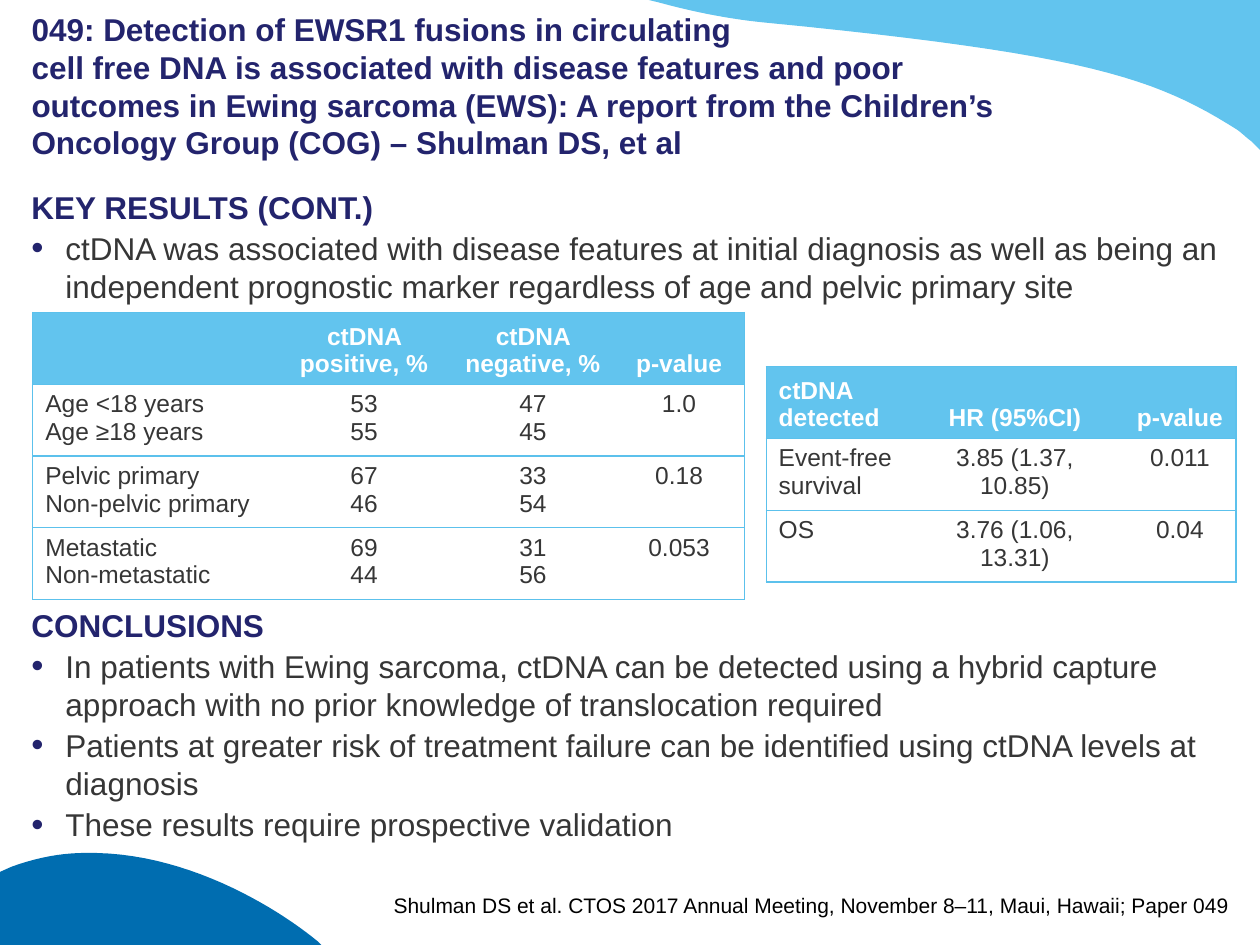
from dataclasses import dataclass

from lxml.etree import SubElement
from pptx import Presentation
from pptx.dml.color import RGBColor as Rgb
from pptx.enum.text import MSO_ANCHOR as Anchor, PP_ALIGN as Align
from pptx.oxml.ns import qn
from pptx.util import Inches, Pt

NAVY, SKY, BLUE = "23246D", "62C4EE", "006DB0"
EDGE, GREY, WHITE, BLACK = "5CC1EC", "363636", "FFFFFF", "000000"


@dataclass
class Curve:
    one: tuple
    two: tuple
    end: tuple


@dataclass
class Wave:
    hue: str
    start: tuple
    steps: list


@dataclass
class Grid:
    left: float
    top: float
    cols: list
    rows: list
    head: Align


@dataclass
class Para:
    text: str
    head: bool = False
    gap: int = 0


WAVES = [
    Wave(SKY, (5.15, 0), [
        (10, 0), (10, 1.19), (9.93, 1.12),
        Curve((9.89, 1.09), (9.86, 1.06), (9.82, 1.03)),
        Curve((9.17, 0.62), (8.64, 0.43), (6.08, 0.18)),
        Curve((5.77, 0.15), (5.49, 0.09), (5.23, 0.02)),
    ]),
    Wave(BLUE, (0.67, 6.77), [
        Curve((1.45, 6.75), (2.18, 7.19), (2.52, 7.47)),
        (2.55, 7.5), (0, 7.5), (0, 6.92), (0.09, 6.88),
        Curve((0.28, 6.81), (0.48, 6.77), (0.67, 6.77)),
    ]),
]

TITLE = (
    "049: Detection of EWSR1 fusions in circulating \v"
    "cell free DNA is associated with disease features and poor \v"
    "outcomes in Ewing sarcoma (EWS): A report from the Children’s "
    "Oncology Group (COG) – Shulman DS, et al"
)
BODY = [
    Para("KEY RESULTS (CONT.)", True),
    Para("ctDNA was associated with disease features at initial diagnosis as well as "
         "being an independent prognostic marker regardless of age and pelvic primary site"),
    Para("CONCLUSIONS", True, 170),
    Para("In patients with Ewing sarcoma, ctDNA can be detected using a hybrid capture "
         "approach with no prior knowledge of translocation required"),
    Para("Patients at greater risk of treatment failure can be identified using ctDNA "
         "levels at diagnosis"),
    Para("These results require prospective validation"),
]
CITE = "Shulman DS et al. CTOS 2017 Annual Meeting, November 8–11, Maui, Hawaii; Paper 049"

GRIDS = [
    Grid(0.26, 2.48, [1.93, 1.4, 1.28, 1.04], [
        ["", "ctDNA positive, %", "ctDNA negative, %", "p-value"],
        ["Age <18 years\nAge ≥18 years", "53\n55", "47\n45", "1.0"],
        ["Pelvic primary\nNon-pelvic primary", "67\n46", "33\n54", "0.18"],
        ["Metastatic\nNon-metastatic", "69\n44", "31\n56", "0.053"],
    ], Align.CENTER),
    Grid(6.08, 2.91, [1.11, 1.73, 0.89], [
        ["ctDNA detected", "HR (95%CI)", "p-value"],
        ["Event-free survival", "3.85 (1.37, 10.85)", "0.011"],
        ["OS", "3.76 (1.06, 13.31)", "0.04"],
    ], Align.LEFT),
]
ROW = 0.57


def paint(fill, hue: str) -> None:
    fill.solid()
    fill.fore_color.rgb = Rgb.from_string(hue)


def style(para, size: int, hue: str, bold: bool = False) -> None:
    for run in para.runs:
        font = run.font
        font.name, font.size, font.bold = "Arial", Pt(size), bold
        paint(font.fill, hue)


def trace(start: tuple, curve: Curve, count: int = 24) -> list:
    dots = []
    for i in range(1, count + 1):
        t = i / count
        u = 1 - t
        dots.append(tuple(
            u**3 * a + 3 * u * u * t * b + 3 * u * t * t * c + t**3 * d
            for a, b, c, d in zip(start, curve.one, curve.two, curve.end)
        ))
    return dots


def draw_wave(slide, wave: Wave) -> None:
    dots = [wave.start]
    for step in wave.steps:
        dots += trace(dots[-1], step) if isinstance(step, Curve) else [step]
    points = [(Inches(x), Inches(y)) for x, y in dots]
    pen = slide.shapes.build_freeform(*points[0])
    pen.add_line_segments(points[1:], close=True)
    shape = pen.convert_to_shape()
    shape.shadow.inherit = False
    paint(shape.fill, wave.hue)
    shape.line.fill.background()


def add_text(slide, box: tuple, text: str, anchor: Anchor, pad: tuple, wrap: bool = True):
    frame = slide.shapes.add_textbox(*map(Inches, box)).text_frame
    frame.word_wrap, frame.vertical_anchor = wrap, anchor
    frame.margin_left = frame.margin_right = 0
    frame.margin_top, frame.margin_bottom = map(Inches, pad)
    frame.text = text
    return frame


def add_dot(para) -> None:
    props = para._p.get_or_add_pPr()
    props.set("marL", str(Inches(0.27)))
    props.set("indent", str(-Inches(0.27)))
    SubElement(SubElement(props, qn("a:buClr")), qn("a:srgbClr")).set("val", NAVY)
    SubElement(props, qn("a:buSzPct")).set("val", "110000")
    SubElement(props, qn("a:buFont")).set("typeface", "Arial")
    SubElement(props, qn("a:buChar")).set("char", "•")


def add_edges(cell, first: bool, last: bool) -> None:
    props = cell._tc.get_or_add_tcPr()
    for side, drawn in (("L", first), ("R", last), ("T", True), ("B", True)):
        line = SubElement(props, qn("a:ln" + side))
        line.set("w", str(Pt(0.75)))
        if drawn:
            fill = SubElement(line, qn("a:solidFill"))
            SubElement(fill, qn("a:srgbClr")).set("val", EDGE)
        else:
            SubElement(line, qn("a:noFill"))


def draw_grid(slide, grid: Grid) -> None:
    high, wide = len(grid.rows), len(grid.cols)
    box = (grid.left, grid.top, sum(grid.cols), ROW * high)
    table = slide.shapes.add_table(high, wide, *map(Inches, box)).table
    for col, width in zip(table.columns, grid.cols):
        col.width = Inches(width)
    for r, row in enumerate(grid.rows):
        for c, text in enumerate(row):
            cell, head = table.cell(r, c), r == 0
            cell.text = text
            cell.vertical_anchor = Anchor.BOTTOM if head else Anchor.TOP
            add_edges(cell, c == 0, c == wide - 1)
            paint(cell.fill, SKY if head else WHITE)
            side = grid.head if head else Align.LEFT
            for para in cell.text_frame.paragraphs:
                para.alignment = Align.CENTER if c else side
                style(para, 14, WHITE if head else GREY, head)


def main() -> None:
    deck = Presentation()
    deck.slide_width, deck.slide_height = Inches(10), Inches(7.5)
    slide = deck.slides.add_slide(deck.slide_layouts[6])
    for wave in WAVES:
        draw_wave(slide, wave)

    title = add_text(slide, (0.25, 0.25, 8.49, 1.03), TITLE, Anchor.BOTTOM, (0.05, 0))
    style(title.paragraphs[0], 18, NAVY, True)

    text = "\n".join(item.text for item in BODY)
    body = add_text(slide, (0.25, 1.44, 9.5, 5.81), text, Anchor.TOP, (0.05, 0.05))
    for para, item in zip(body.paragraphs, BODY):
        para.space_before, para.space_after = Pt(item.gap), Pt(2)
        style(para, 18, NAVY if item.head else GREY, item.head)
        if not item.head:
            add_dot(para)

    cite = add_text(slide, (3.08, 7.08, 6.68, 0.2), CITE, Anchor.BOTTOM, (0, 0), False)
    cite.paragraphs[0].alignment = Align.RIGHT
    style(cite.paragraphs[0], 12, BLACK)

    for grid in GRIDS:
        draw_grid(slide, grid)
    deck.save("out.pptx")


if __name__ == "__main__":
    main()
